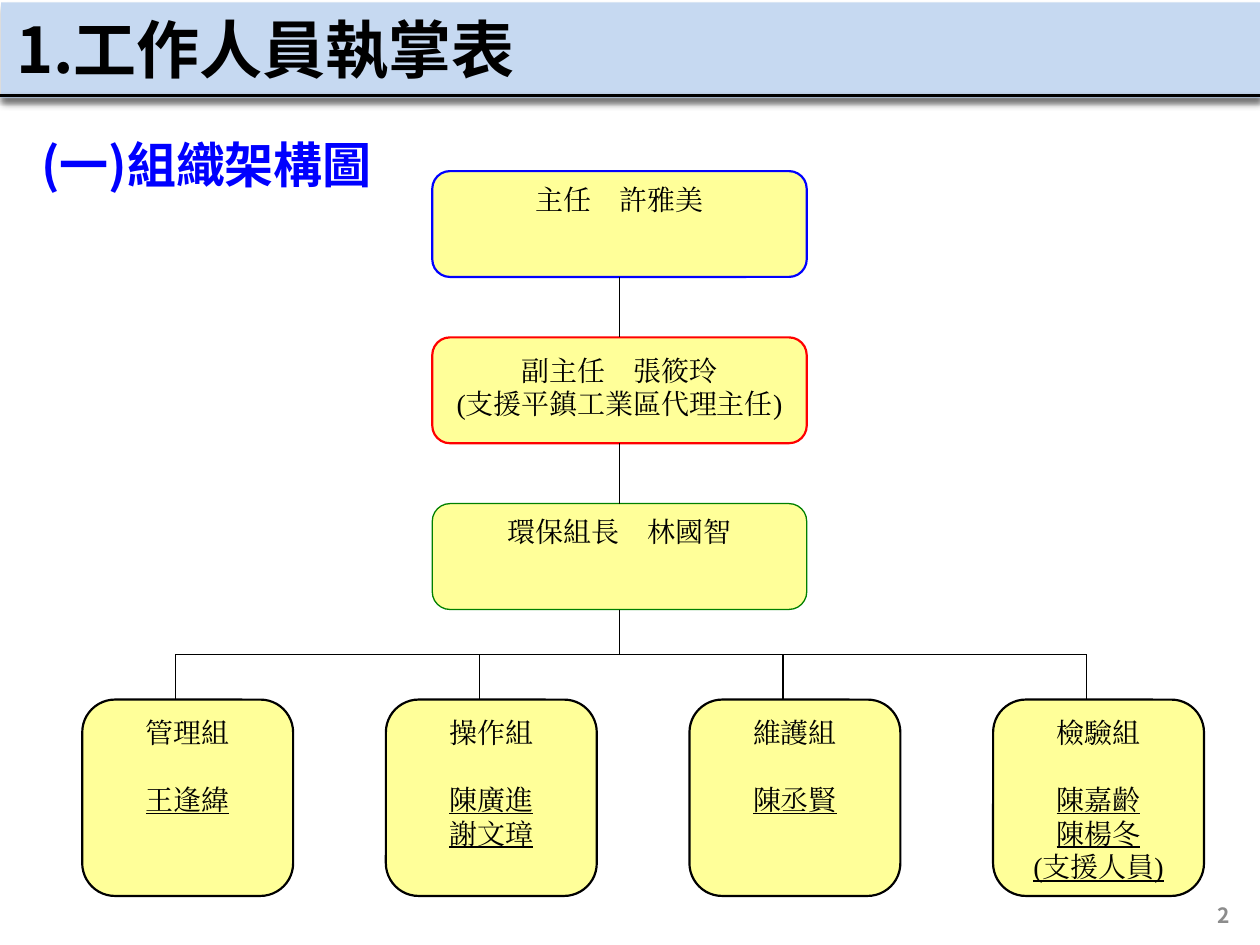
from lxml import etree
from pptx import Presentation
from pptx.dml.color import RGBColor
from pptx.enum import shapes, text
from pptx.oxml import ns
from pptx.util import Pt

SANS = "Noto Sans CJK SC"
SERIF = "Times New Roman"
BLACK = "000000"
BLUE = "0000FF"
YELLOW = "FFFF99"


def color(value):
    return RGBColor.from_string(value)


def write(frame, lines, size=16, font=SERIF, ink=BLACK, bold=False, align="CENTER",
          anchor="TOP", top=3.6, underline_from=None, gap=0):
    frame.word_wrap = True
    frame.vertical_anchor = getattr(text.MSO_ANCHOR, anchor)
    frame.margin_left = frame.margin_right = Pt(7.2)
    frame.margin_top, frame.margin_bottom = Pt(top), Pt(3.6)
    for i, line in enumerate(lines):
        paragraph = frame.paragraphs[0] if i == 0 else frame.add_paragraph()
        paragraph.alignment = getattr(text.PP_ALIGN, align)
        if i == 1:
            paragraph.space_before = Pt(gap)
        run = paragraph.add_run()
        run.text = line
        run.font.size, run.font.name, run.font.bold = Pt(size), font, bold
        run.font.color.rgb = color(ink)
        if underline_from is not None and i >= underline_from:
            run.font.underline = True
        east_asian = etree.SubElement(run.font._element, ns.qn("a:ea"))
        east_asian.set("typeface", font)


def set_shadow(item, opacity=0, blur=0, distance=0):
    effects = etree.SubElement(item.element.spPr, ns.qn("a:effectLst"))
    if opacity:
        outer = etree.SubElement(effects, ns.qn("a:outerShdw"), blurRad=str(Pt(blur)),
                                 dist=str(Pt(distance)), dir="5400000", rotWithShape="0")
        black = etree.SubElement(outer, ns.qn("a:srgbClr"), val=BLACK)
        etree.SubElement(black, ns.qn("a:alpha"), val=str(opacity * 1000))


def add_block(slide, kind, left, top, width, height, fill, outline=None, weight=1.25):
    block = slide.shapes.add_shape(kind, Pt(left), Pt(top), Pt(width), Pt(height))
    block.fill.solid()
    block.fill.fore_color.rgb = color(fill)
    if outline:
        block.line.color.rgb = color(outline)
        block.line.width = Pt(weight)
    else:
        block.line.fill.background()
    return block


def add_line(slide, x1, y1, x2, y2, weight=0.75, **shadow):
    line = slide.shapes.add_connector(shapes.MSO_CONNECTOR.STRAIGHT,
                                      Pt(x1), Pt(y1), Pt(x2), Pt(y2))
    line.line.color.rgb = color(BLACK)
    line.line.width = Pt(weight)
    set_shadow(line, **shadow)
    return line


def add_text(slide, left, top, width, height, words, **style):
    box = slide.shapes.add_textbox(Pt(left), Pt(top), Pt(width), Pt(height))
    write(box.text_frame, [words], **style)


def add_header(slide):
    title = slide.shapes.title
    title.left, title.top, title.width, title.height = Pt(2), Pt(0), Pt(505.5), Pt(55)
    write(title.text_frame, ["1.工作人員執掌表"], size=36, font=SANS, bold=True,
          align="LEFT", anchor="MIDDLE")
    band = add_block(slide, shapes.MSO_SHAPE.RECTANGLE, 0.7, 1.4, 720, 54.7, "C6D9F1")
    set_shadow(band, opacity=40, blur=4, distance=3)
    rule = add_line(slide, 0, 54.7, 720, 54.7, weight=2, opacity=38, blur=3.1, distance=1.6)
    for part in (band, rule):
        title.element.addprevious(part.element)


def add_leaders(slide):
    leaders = [
        (["主任　許雅美"], BLUE, 1.25, 3.6),
        (["副主任　張筱玲", "(支援平鎮工業區代理主任)"], "FF0000", 1.25, 6),
        (["環保組長　林國智"], "008000", 0.75, 3.6),
    ]
    first, step, height, center = 97.8, 95, 60.5, 354.2
    for i, (lines, outline, weight, inset) in enumerate(leaders):
        top = first + i * step
        leader = add_block(slide, shapes.MSO_SHAPE.ROUNDED_RECTANGLE, 247, top, 214, height,
                           YELLOW, outline, weight)
        leader.adjustments[0] = 0.167
        leader.shadow.inherit = False
        write(leader.text_frame, lines, top=inset)
        if i:
            add_line(slide, center, top - step + height, center, top)
    add_line(slide, center, first + 2 * step + height, center, 374)


def add_teams(slide):
    teams = [
        ["管理組", "王逢緯"],
        ["操作組", "陳廣進", "謝文璋"],
        ["維護組", "陳丞賢"],
        ["檢驗組", "陳嘉齡", "陳楊冬", "(支援人員)"],
    ]
    first, step, branch, top = 47, 173.5, 374, 399.8
    stem = first + 53.5
    add_line(slide, stem, branch, stem + step * (len(teams) - 1), branch)
    for i, lines in enumerate(teams):
        team = add_block(slide, shapes.MSO_SHAPE.FLOWCHART_ALTERNATE_PROCESS,
                         first + i * step, top, 120.5, 112.2, YELLOW, BLACK)
        team.shadow.inherit = False
        write(team.text_frame, lines, underline_from=1, gap=19.2)
        add_line(slide, stem + i * step, branch, stem + i * step, top)


def main():
    deck = Presentation()
    deck.slide_width, deck.slide_height = Pt(720), Pt(540)
    slide = deck.slides.add_slide(deck.slide_layouts[5])
    add_header(slide)
    add_text(slide, 16.5, 73.5, 462, 51, "(一)組織架構圖", size=28, font=SANS,
             ink=BLUE, bold=True, align="LEFT")
    add_text(slide, 649.5, 508.3, 60.5, 28.8, "2", size=12, font=SANS, ink="8C8C8C",
             bold=True, align="RIGHT", anchor="MIDDLE")
    add_leaders(slide)
    add_teams(slide)
    deck.save("out.pptx")


if __name__ == "__main__":
    main()
